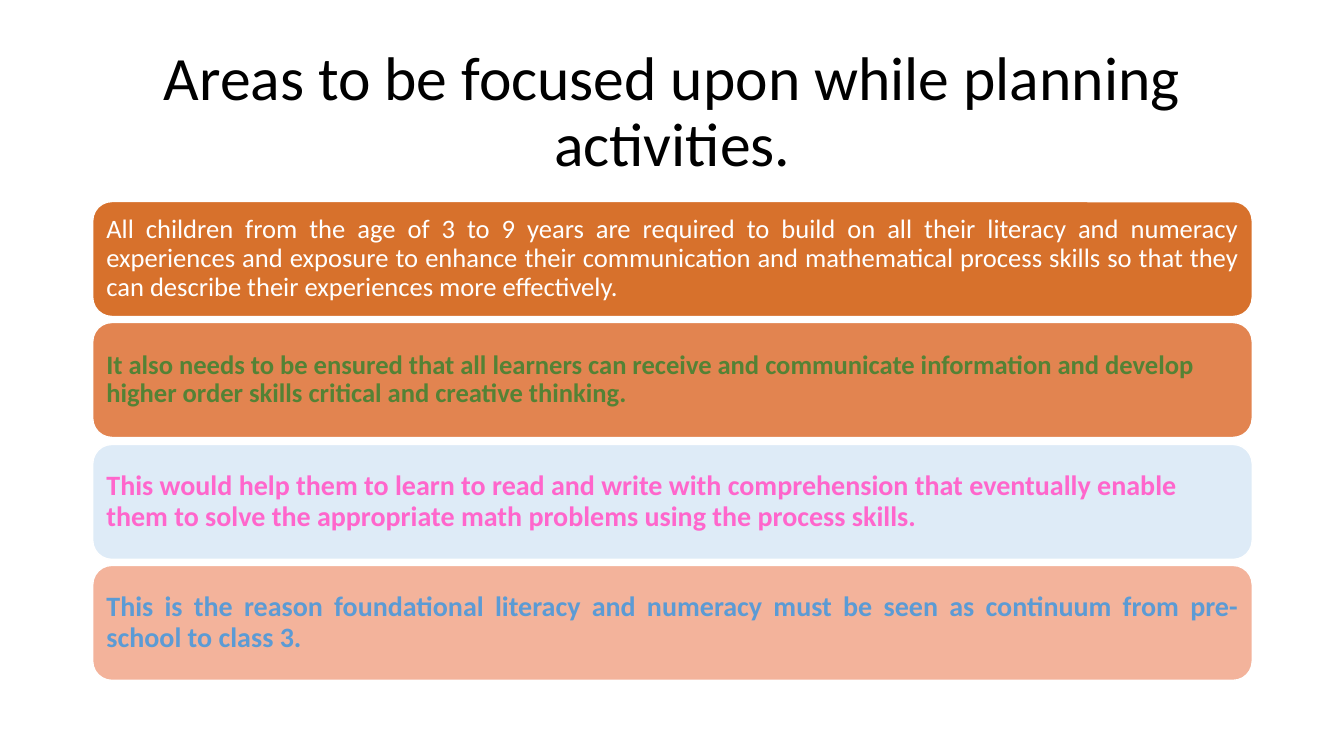
from pptx import Presentation
from pptx.dml.color import RGBColor
from pptx.enum.shapes import MSO_SHAPE
from pptx.enum.text import MSO_ANCHOR, MSO_AUTO_SIZE, PP_ALIGN
from pptx.util import Pt

PX = 9144
ROUNDED = MSO_SHAPE.ROUNDED_RECTANGLE
MIDDLE = MSO_ANCHOR.MIDDLE
NO_FIT = MSO_AUTO_SIZE.NONE
LEFT, CENTER, JUSTIFY = PP_ALIGN.LEFT, PP_ALIGN.CENTER, PP_ALIGN.JUSTIFY

COLORS = {
    "black": "000000",
    "white": "FFFFFF",
    "rust": "D7712C",
    "orange": "E28450",
    "ice": "DEEBF7",
    "peach": "F3B39B",
    "green": "548235",
    "pink": "FF66CC",
    "blue": "5B9BD5",
}

BARS = [
    ("All children from the age of 3 to 9 years are required to build on all "
     "their literacy and numeracy experiences and exposure to enhance their "
     "communication and mathematical process skills so that they can describe "
     "their experiences more effectively.",
     "rust", "white", 19, False, JUSTIFY),
    ("It also needs to be ensured that all learners can receive and "
     "communicate information and develop higher order skills critical and "
     "creative thinking.",
     "orange", "green", 19, True, LEFT),
    ("This would help them to learn to read and write with comprehension that "
     "eventually enable them to solve the appropriate math problems using the "
     "process skills.",
     "ice", "pink", 20, True, LEFT),
    ("This is the reason foundational literacy and numeracy must be seen as "
     "continuum from pre-school to class 3.",
     "peach", "blue", 20, True, JUSTIFY),
]


class Deck:
    """Holds the style and current slide, and draws its elements."""

    font = "Calibri"

    def __init__(self, width, height):
        self.prs = Presentation()
        self.prs.slide_width = width * PX
        self.prs.slide_height = height * PX
        self.s = self.prs.slides.add_slide(self.prs.slide_layouts[5])

    def color(self, name):
        return RGBColor.from_string(COLORS[name])

    def set_text(self, sp, text, size, color, bold, align):
        tf = sp.text_frame
        tf.text = text
        tf.word_wrap = True
        tf.auto_size = NO_FIT
        tf.vertical_anchor = MIDDLE
        p = tf.paragraphs[0]
        p.alignment = align
        p.line_spacing = 0.9
        r = p.runs[0]
        r.font.name = self.font
        r.font.size = Pt(size)
        r.font.bold = bold
        r.font.color.rgb = self.color(color)

    def title(self, text, x, y, w, h):
        sp = self.s.shapes.title
        sp.left, sp.top, sp.width, sp.height = (v * PX for v in (x, y, w, h))
        self.set_text(sp, text, 44, "black", False, CENTER)

    def bar(self, text, fill, color, size, bold, align, x, y, w, h):
        sp = self.s.shapes.add_shape(ROUNDED, x * PX, y * PX, w * PX, h * PX)
        sp.shadow.inherit = False
        sp.fill.solid()
        sp.fill.fore_color.rgb = self.color(fill)
        sp.line.color.rgb = self.color("white")
        sp.line.width = Pt(1)
        tf = sp.text_frame
        tf.margin_left = tf.margin_right = 8 * PX
        tf.margin_top = tf.margin_bottom = 8 * PX
        self.set_text(sp, text, size, color, bold, align)


def main():
    deck = Deck(1333, 750)
    left, width = 92, 1150
    deck.title("Areas to be focused upon while planning activities.",
               left, 40, width, 145)
    first, last, height = 200, 561, 114
    for i, bar in enumerate(BARS):
        top = first + round((last - first) * i / (len(BARS) - 1))
        deck.bar(*bar, left, top, width, height)
    deck.prs.save("out.pptx")


if __name__ == "__main__":
    main()
